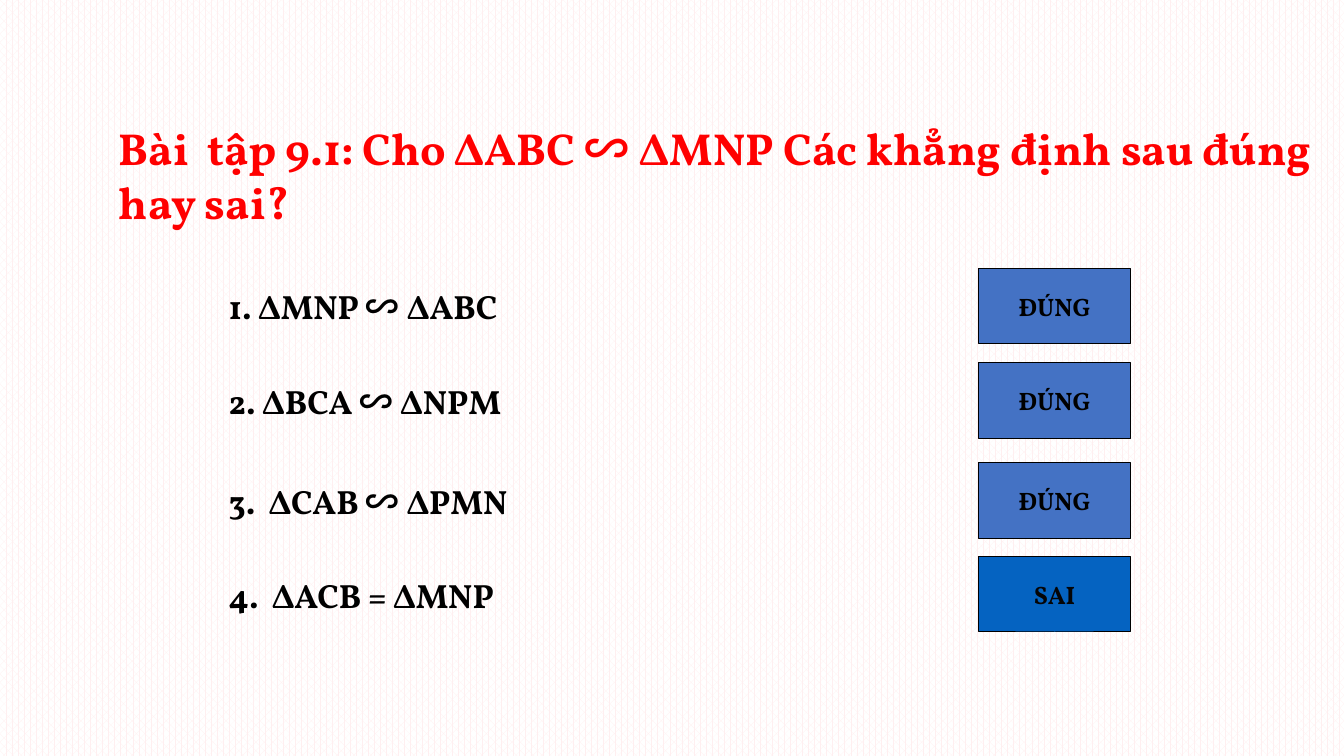
from dataclasses import dataclass

from lxml import etree
from pptx import Presentation
from pptx.dml.color import RGBColor
from pptx.enum.dml import MSO_PATTERN
from pptx.enum.shapes import MSO_SHAPE
from pptx.enum.text import MSO_ANCHOR, MSO_AUTO_SIZE, PP_ALIGN
from pptx.oxml.ns import qn
from pptx.util import Inches, Pt

RECTANGLE = MSO_SHAPE.RECTANGLE
DOTTED = MSO_PATTERN.PERCENT_60
TOP, MIDDLE = MSO_ANCHOR.TOP, MSO_ANCHOR.MIDDLE
LEFT, CENTER = PP_ALIGN.LEFT, PP_ALIGN.CENTER
FIXED = MSO_AUTO_SIZE.NONE


@dataclass(frozen=True)
class Theme:
    """Fonts, type sizes in points and colours of the slide."""

    font: str = "Vollkorn"
    symbol_font: str = "Noto Sans CJK JP"
    title_size: int = 32
    statement_size: int = 24
    answer_size: int = 18
    title: str = "FF0000"
    ink: str = "000000"
    true_fill: str = "4472C4"
    false_fill: str = "0563C1"
    false_ink: str = "050507"
    dots: str = "FFEFF0"
    paper: str = "FFFFFF"


THEME = Theme()
SIMILAR = "∽ "
QUESTION = ("Bài  tập 9.1: Cho ΔABC ", SIMILAR, "ΔMNP Các khẳng định sau đúng hay sai?")
STATEMENTS = [
    (2.66, ("1. ΔMNP ", SIMILAR, "ΔABC"), True),
    (3.6, ("2. ΔBCA ", SIMILAR, "ΔNPM"), True),
    (4.59, ("3.  ΔCAB ", SIMILAR, "ΔPMN"), True),
    (5.52, ("4.  ΔACB = ΔMNP",), False),
]


def write(frame, pieces, size, color, align=LEFT, anchor=TOP):
    """Fill a text frame with one bold paragraph made of the given pieces."""
    frame.auto_size = FIXED
    frame.vertical_anchor = anchor
    paragraph = frame.paragraphs[0]
    paragraph.alignment = align
    paragraph.line_spacing = 1.0
    paragraph.space_before = Pt(0)
    for piece in pieces:
        run = paragraph.add_run()
        run.text = piece
        run.font.size = Pt(size)
        run.font.bold = True
        run.font.color.rgb = RGBColor.from_string(color)
        run.font.name = THEME.symbol_font if piece == SIMILAR else THEME.font
        east_asian = etree.SubElement(run.font._element, qn("a:ea"))
        east_asian.set("typeface", run.font.name)


def paint_background(slide):
    """Cover the slide with the pale dotted pattern."""
    fill = slide.background.fill
    fill.patterned()
    fill.pattern = DOTTED
    fill.fore_color.rgb = RGBColor.from_string(THEME.dots)
    fill.back_color.rgb = RGBColor.from_string(THEME.paper)


def place_question(slide, left, top, width, height):
    """Put the exercise question in the title placeholder."""
    question = slide.shapes.title
    question.left, question.top = Inches(left), Inches(top)
    question.width, question.height = Inches(width), Inches(height)
    question.text_frame.word_wrap = True
    write(question.text_frame, QUESTION, THEME.title_size, THEME.title)


def place_statement(slide, left, top, width, height, pieces, is_true):
    """Place a statement at the left of its row and the answer at the right."""
    statement = slide.shapes.add_textbox(
        Inches(left), Inches(top + 0.13), Inches(width), Inches(0.5)
    )
    statement.text_frame.word_wrap = True
    write(statement.text_frame, pieces, THEME.statement_size, THEME.ink)

    answer_width = 1.5
    answer = slide.shapes.add_shape(
        RECTANGLE,
        Inches(left + width - answer_width),
        Inches(top),
        Inches(answer_width),
        Inches(height),
    )
    answer.shadow.inherit = False
    answer.fill.solid()
    fill = THEME.true_fill if is_true else THEME.false_fill
    answer.fill.fore_color.rgb = RGBColor.from_string(fill)
    answer.line.color.rgb = RGBColor.from_string(THEME.ink)
    answer.line.width = Pt(0.75)
    answer.text_frame.word_wrap = False
    label = "ĐÚNG" if is_true else "SAI"
    ink = THEME.ink if is_true else THEME.false_ink
    write(answer.text_frame, (label,), THEME.answer_size, ink, CENTER, MIDDLE)


def main():
    """Build the true-or-false exercise slide."""
    deck = Presentation()
    deck.slide_width, deck.slide_height = Inches(13.33), Inches(7.5)
    slide = deck.slides.add_slide(deck.slide_layouts.get_by_name("Title Only"))
    paint_background(slide)
    place_question(slide, 1.08, 1.15, 12.08, 1.18)
    for top, pieces, is_true in STATEMENTS:
        place_statement(slide, 2.17, top, 9.04, 0.75, pieces, is_true)
    deck.save("out.pptx")


if __name__ == "__main__":
    main()
